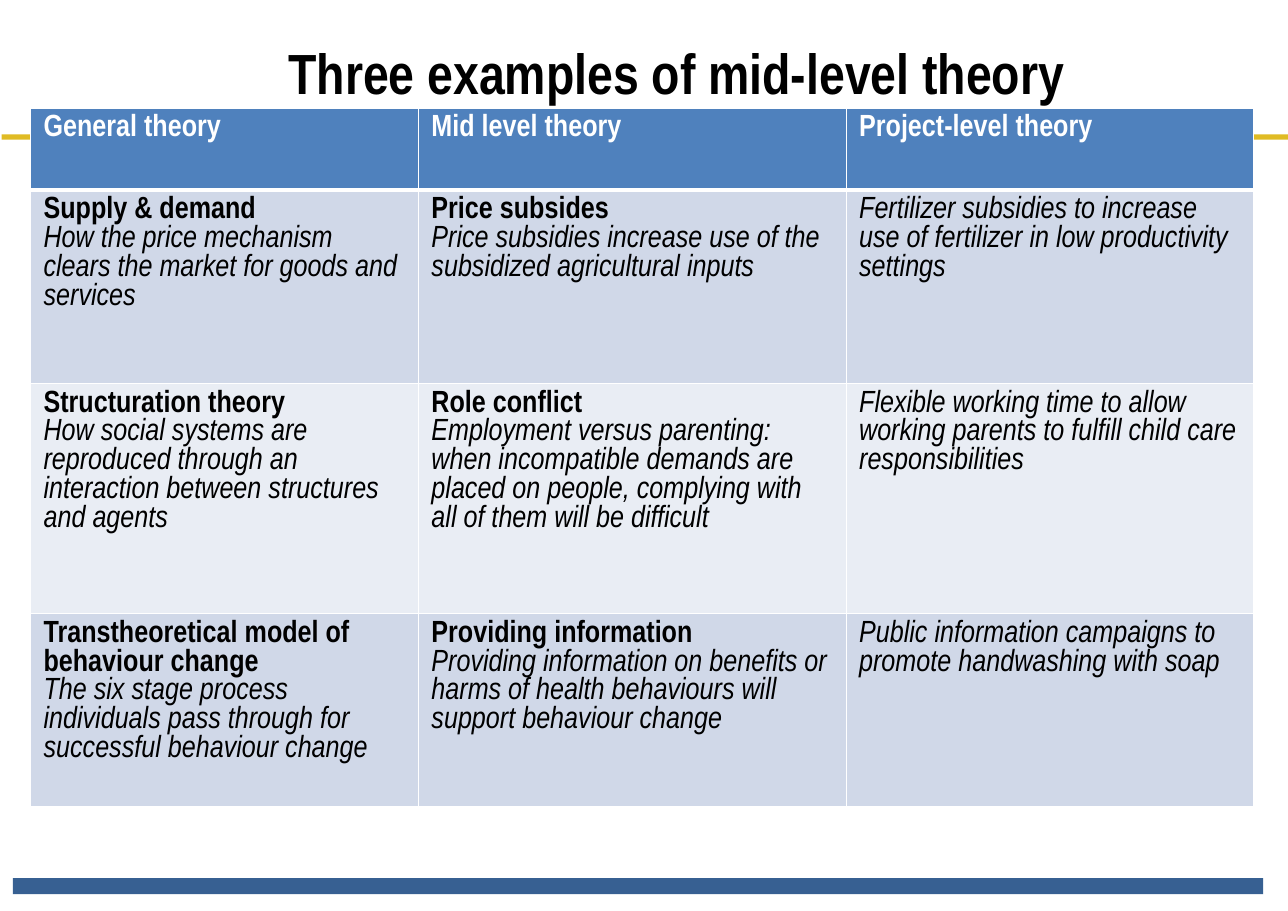
from lxml import etree
from pptx import Presentation
from pptx.dml.color import RGBColor
from pptx.enum.shapes import MSO_SHAPE as SHAPE
from pptx.enum.text import MSO_ANCHOR as ANCHOR, PP_ALIGN as ALIGN
from pptx.oxml.ns import qn
from pptx.util import Pt

FONT = "Arial Narrow"
COLORS = {
    "text": "000000",
    "white": "FFFFFF",
    "header": "4F81BD",
    "band_dark": "D0D8E8",
    "band_light": "E9EDF4",
    "footer": "376092",
    "gold": "E0BB24",
}
COL_WIDTHS = [253.5, 279.5, 266]
ROW_HEIGHTS = [53.5, 126.5, 150.5, 126.5]
HEADERS = ["General theory", "Mid level theory", "Project-level theory"]
EXAMPLES = [
    [
        ("Supply & demand",
         "How the price mechanism clears the market for goods and services"),
        ("Price subsides",
         "Price subsidies increase use of the subsidized agricultural inputs"),
        (None,
         "Fertilizer subsidies to increase use of fertilizer in low productivity settings"),
    ],
    [
        ("Structuration theory",
         "How social systems are reproduced through an interaction between structures and agents"),
        ("Role conflict",
         "Employment versus parenting: when incompatible demands are placed on people, "
         "complying with all of them will be difficult"),
        (None,
         "Flexible working time to allow working parents to fulfill child care responsibilities"),
    ],
    [
        ("Transtheoretical model of behaviour change",
         "The six stage process individuals pass through for successful behaviour change"),
        ("Providing information",
         "Providing information on benefits or harms of health behaviours will support "
         "behaviour change"),
        (None, "Public information campaigns to promote handwashing with soap"),
    ],
]


def rgb(name):
    return RGBColor.from_string(COLORS[name])


def set_paragraph(p, text, size, color="text", bold=False, italic=False):
    p.text = text
    p.font.name = FONT
    p.font.size = Pt(size)
    p.font.bold = bold
    p.font.italic = italic
    p.font.color.rgb = rgb(color)


def add_bar(slide, left, top, width, height, color):
    sp = slide.shapes.add_shape(SHAPE.RECTANGLE, Pt(left), Pt(top), Pt(width), Pt(height))
    sp.shadow.inherit = False
    sp.fill.solid()
    sp.fill.fore_color.rgb = rgb(color)
    sp.line.fill.background()


def add_title(slide, text):
    sp = slide.shapes.title
    sp.left, sp.top, sp.width, sp.height = Pt(180.5), Pt(20), Pt(610.5), Pt(53.5)
    tf = sp.text_frame
    tf.word_wrap = True
    tf.vertical_anchor = ANCHOR.MIDDLE
    tf.margin_left = tf.margin_right = Pt(8)
    tf.margin_top = tf.margin_bottom = Pt(4)
    p = tf.paragraphs[0]
    p.alignment = ALIGN.LEFT
    set_paragraph(p, text, 37, bold=True)


def set_borders(cell, widths):
    tc_pr = cell._tc.get_or_add_tcPr()
    for side, width in widths.items():
        ln = etree.SubElement(tc_pr, qn(f"a:ln{side}"), w=str(Pt(width)))
        fill = etree.SubElement(ln, qn("a:solidFill"))
        etree.SubElement(fill, qn("a:srgbClr"), val=COLORS["white"])


def format_cell(cell, color, top=1, bottom=1):
    cell.margin_left = cell.margin_right = Pt(8.5)
    cell.margin_top = cell.margin_bottom = Pt(4.25)
    set_borders(cell, {"L": 1, "R": 1, "T": top, "B": bottom})
    cell.fill.solid()
    cell.fill.fore_color.rgb = rgb(color)


def fill_example(cell, heading, description):
    tf = cell.text_frame
    p = tf.paragraphs[0]
    if heading:
        set_paragraph(p, heading, 20, bold=True)
        p = tf.add_paragraph()
    set_paragraph(p, description, 20, italic=True)


def add_theory_table(slide):
    table = slide.shapes.add_table(
        len(ROW_HEIGHTS), len(COL_WIDTHS), Pt(20), Pt(70.5),
        Pt(sum(COL_WIDTHS)), Pt(sum(ROW_HEIGHTS))).table
    for column, width in zip(table.columns, COL_WIDTHS):
        column.width = Pt(width)
    for row, height in zip(table.rows, ROW_HEIGHTS):
        row.height = Pt(height)
    for c, header in enumerate(HEADERS):
        cell = table.cell(0, c)
        format_cell(cell, "header", bottom=3)
        set_paragraph(cell.text_frame.paragraphs[0], header, 20, "white", bold=True)
    for r, examples in enumerate(EXAMPLES, 1):
        for c, (heading, description) in enumerate(examples):
            cell = table.cell(r, c)
            format_cell(cell, "band_dark" if r % 2 else "band_light", top=3 if r == 1 else 1)
            fill_example(cell, heading, description)


def main():
    prs = Presentation()
    prs.slide_width, prs.slide_height = Pt(841.68), Pt(595.44)
    slide = prs.slides.add_slide(prs.slide_layouts[5])
    add_bar(slide, 8.5, 574, 817, 10.5, "footer")
    add_bar(slide, 1, 87.75, 840.68, 3.5, "gold")
    add_theory_table(slide)
    add_title(slide, "Three examples of mid-level theory")
    prs.save("out.pptx")


if __name__ == "__main__":
    main()
